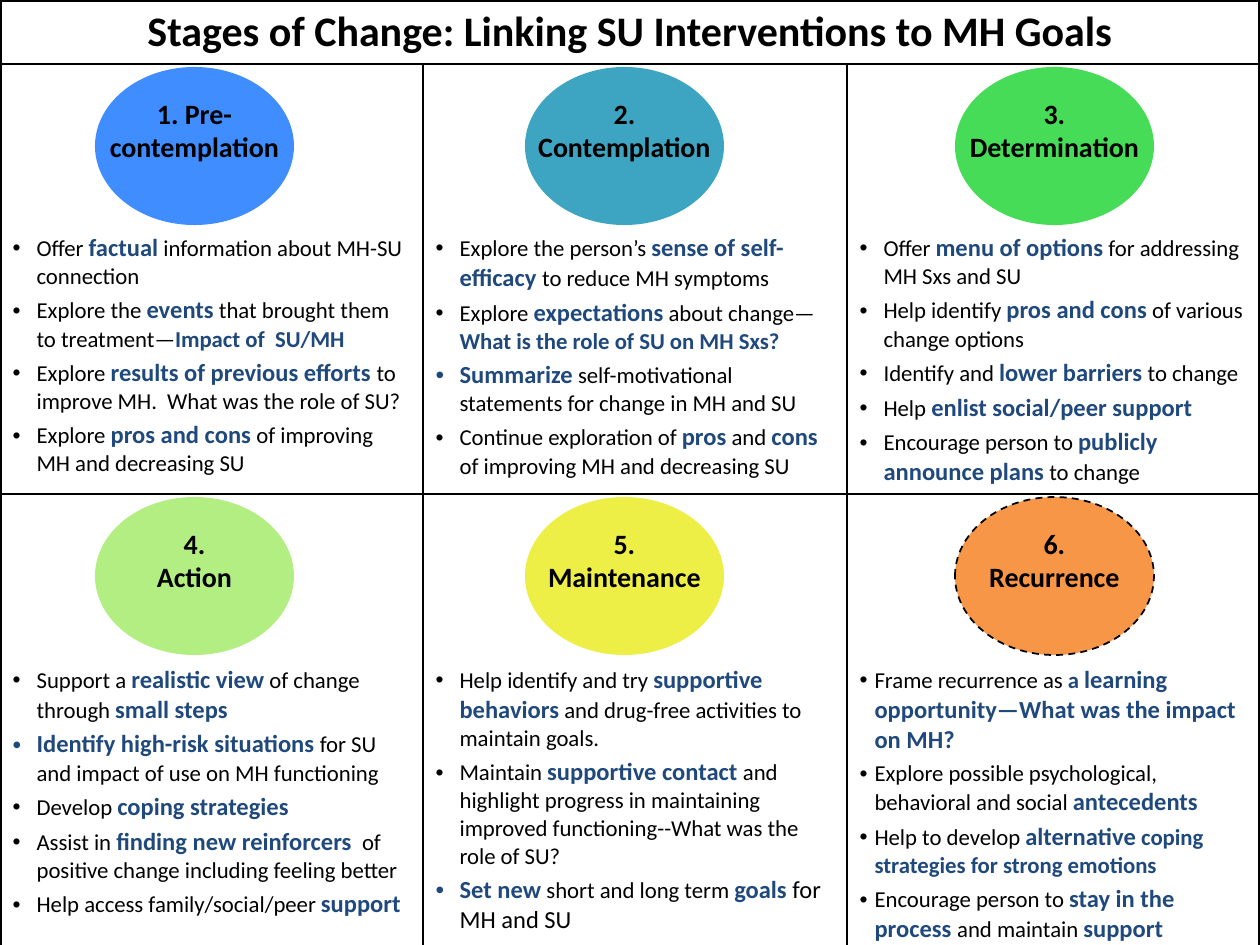
from itertools import accumulate
from lxml import etree
from pptx import Presentation
from pptx.dml.color import RGBColor
from pptx.enum.dml import MSO_LINE
from pptx.enum.shapes import MSO_SHAPE
from pptx.enum.text import MSO_ANCHOR, PP_ALIGN
from pptx.oxml.ns import qn
from pptx.util import Pt

CENTER, LEFT = PP_ALIGN.CENTER, PP_ALIGN.LEFT
TOP, DASH, OVAL = MSO_ANCHOR.TOP, MSO_LINE.DASH, MSO_SHAPE.OVAL
COLORS = {"black": "000000", "key": "1F497D", "blue": "3F8DFF", "teal": "3DA5C1",
          "green": "47DC57", "lime": "B3EE82", "yellow": "EEEF46", "orange": "F79646"}

TITLE = "Stages of Change: Linking SU Interventions to MH Goals"
STAGES = [
    (["1. Pre-", "contemplation"], "blue", [
        "Offer |*factual| information about MH-SU connection",
        "Explore the |*events| that brought them to treatment—|_Impact of  SU/MH",
        "Explore |*results of previous efforts |to improve MH.  What was the role of SU?",
        "Explore |*pros and cons| of improving MH and decreasing SU"]),
    (["2.", "Contemplation"], "teal", [
        "Explore the person’s |*sense of self-efficacy |to reduce MH symptoms",
        "Explore |*expectations| about change—|_What is the role of SU on MH Sxs?",
        "*Summarize| self-motivational statements for change in MH and SU",
        "Continue exploration of |*pros| and |*cons |of improving MH and decreasing SU"]),
    (["3.", "Determination"], "green", [
        "Offer |*menu of options| for addressing MH Sxs and SU",
        "Help identify |*pros and cons| of various change options",
        "Identify and |*lower barriers| to change",
        "Help |*enlist social/peer support",
        "Encourage person to |*publicly announce plans| to change"]),
    (["4.", "Action"], "lime", [
        "Support a |*realistic view| of change through |*small steps",
        "*Identify high-risk situations| for SU and impact of use on MH functioning",
        "Develop |*coping strategies",
        "Assist in |*finding new reinforcers|  of positive change including feeling better",
        "Help access family/social/peer |*support"]),
    (["5.", "Maintenance"], "yellow", [
        "Help identify and try |*supportive behaviors| and drug-free activities to maintain goals.",
        "Maintain |*supportive contact| and highlight progress in maintaining improved "
        "functioning--What was the role of SU?",
        "*Set new| short and long term |*goals |^for MH and SU"]),
    (["6.", "Recurrence"], "orange", [
        "Frame recurrence as |_a |*learning opportunity—What was the impact on MH?",
        "Explore possible psychological, behavioral and social |*antecedents",
        "Help to develop |*alternative| |_coping strategies for strong emotions",
        "Encourage person to |*stay in the process |and maintain |*support"]),
]
STYLES = {"": (13, False, "black"), "*": (14, True, "key"),
          "_": (13, True, "key"), "^": (14, False, "black")}
COLUMNS = [423, 424, 413]
ROWS = [63, 163, 267, 165, 294]
INDENTS = [24, 24, 24, 24, 24, 15]
OVAL_W, OVAL_H, OVAL_X, OVAL_STEP = 199, 158, 95, 430
THICK, THIN = 2.25, 1


def px(n):
    return round(n * 914400 / 126)


def rgb(name):
    return RGBColor.from_string(COLORS[name])


def add_run(paragraph, text, size, bold, color):
    run = paragraph.add_run()
    run.text = text
    for key, value in {"name": "Calibri", "size": Pt(size), "bold": bold}.items():
        setattr(run.font, key, value)
    run.font.color.rgb = rgb(color)


def add_paragraph(frame, index, align):
    paragraph = frame.add_paragraph() if index else frame.paragraphs[0]
    paragraph.alignment = align
    return paragraph


def add_bullets(frame, items, indent):
    for i, item in enumerate(items):
        paragraph = add_paragraph(frame, i, LEFT)
        if i:
            paragraph.space_before = Pt(2.8)
        props = paragraph._p.get_or_add_pPr()
        props.set("marL", str(px(indent)))
        props.set("indent", str(-px(indent)))
        etree.SubElement(props, qn("a:buFont"), typeface="Arial")
        etree.SubElement(props, qn("a:buChar"), char="•")
        for part in item.split("|"):
            mark = part[0] if part[0] in STYLES else ""
            add_run(paragraph, part[len(mark):], *STYLES[mark])


def set_borders(cell, widths):
    props = cell._tc.get_or_add_tcPr()
    for side, width in zip("LRTB", widths):
        line = etree.SubElement(props, qn(f"a:ln{side}"), w=str(Pt(width)))
        if width:
            fill = etree.SubElement(line, qn("a:solidFill"))
            etree.SubElement(fill, qn("a:srgbClr"), val=COLORS["black"])
        else:
            etree.SubElement(line, qn("a:noFill"))


def add_grid(slide):
    table = slide.shapes.add_table(len(ROWS), len(COLUMNS), 0, 0,
                                   px(sum(COLUMNS)), px(sum(ROWS))).table
    table.first_row = table.horz_banding = False
    for column, width in zip(table.columns, COLUMNS):
        column.width = px(width)
    for row, height in zip(table.rows, ROWS):
        row.height = px(height)
    last = len(COLUMNS) - 1
    for r in range(len(ROWS)):
        for c in range(len(COLUMNS)):
            left = THIN if c else THICK
            right = THICK if c == last else THIN
            top = THIN if r % 2 else 0
            bottom = THICK if r == len(ROWS) - 1 else 0 if r % 2 else THIN
            cell = table.cell(r, c)
            set_borders(cell, (left, right, top, bottom) if r else (THICK, THICK, THICK, THIN))
            cell.fill.background()
    table.cell(0, 0).merge(table.cell(0, last))
    add_run(add_paragraph(table.cell(0, 0).text_frame, 0, CENTER), TITLE, 24, True, "black")
    for i, (_, _, items) in enumerate(STAGES):
        band, c = divmod(i, len(COLUMNS))
        add_bullets(table.cell(2 + 2 * band, c).text_frame, items, INDENTS[i])


def add_stage_oval(slide, index, label, color):
    band, c = divmod(index, len(COLUMNS))
    row_tops = [0, *accumulate(ROWS)]
    oval = slide.shapes.add_shape(OVAL, px(OVAL_X + c * OVAL_STEP), px(row_tops[1 + 2 * band] + 4),
                                  px(OVAL_W), px(OVAL_H))
    oval.shadow.inherit = False
    oval.fill.solid()
    oval.fill.fore_color.rgb = rgb(color)
    if color == "orange":
        oval.line.color.rgb = rgb("black")
        oval.line.width = Pt(THIN)
        oval.line.dash_style = DASH
    else:
        oval.line.fill.background()
    frame = oval.text_frame
    for key, value in {"word_wrap": False, "vertical_anchor": TOP, "margin_top": px(6)}.items():
        setattr(frame, key, value)
    for i, text in enumerate(label):
        add_run(add_paragraph(frame, i, CENTER), text, 16, True, "black")


def main():
    deck = Presentation()
    deck.slide_width, deck.slide_height = px(1260), px(945)
    slide = deck.slides.add_slide(deck.slide_layouts[6])
    add_grid(slide)
    for i, (label, color, _) in enumerate(STAGES):
        add_stage_oval(slide, i, label, color)
    deck.save("out.pptx")


if __name__ == "__main__":
    main()
